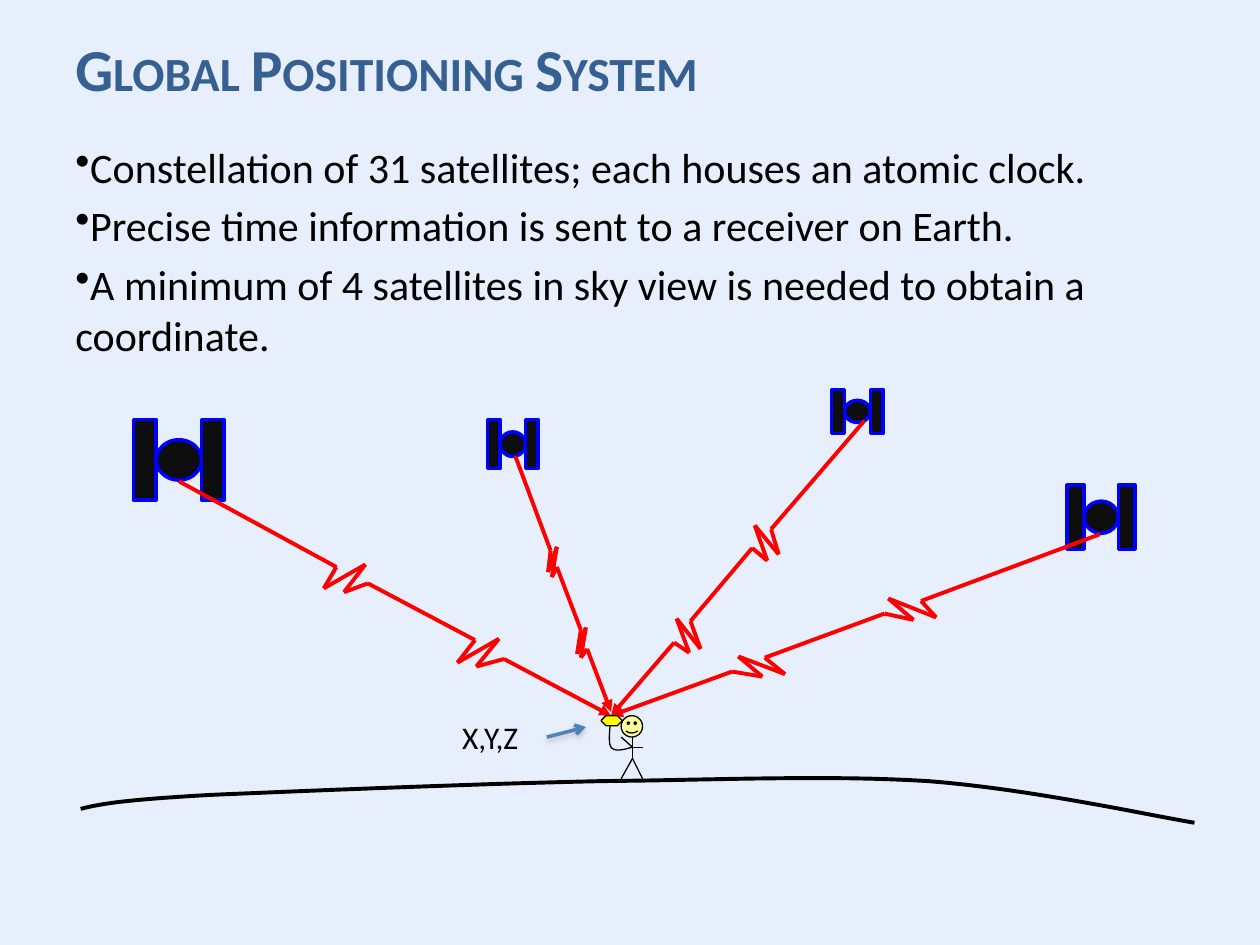
import itertools
from dataclasses import dataclass

import lxml.etree
import pptx
import pptx.dml.color
import pptx.enum.dml
import pptx.enum.shapes
import pptx.enum.text
import pptx.oxml.ns
import pptx.util

Inches = pptx.util.Inches
Pt = pptx.util.Pt
qn = pptx.oxml.ns.qn
SHAPE = pptx.enum.shapes.MSO_SHAPE


@dataclass(frozen=True)
class Theme:
    font: str = "Calibri"
    sky: str = "E8EFFC"
    heading: str = "376092"
    ink: str = "000000"
    panel: str = "0D0D0D"
    panel_edge: str = "0000FF"
    signal: str = "FF0000"
    face: str = "FFFF99"
    receiver: str = "FFFF00"
    pointer: str = "4F81BD"
    shadow: str = "808080"
    title_size: float = 34
    body_size: float = 24
    label_size: float = 18
    thin: float = 0.75
    medium: float = 2
    thick: float = 2.25


THEME = Theme()

# Left, top, width, height of each satellite
SATELLITES = [
    (6.6, 3.09, 0.41, 0.35),
    (1.06, 3.33, 0.72, 0.64),
    (8.47, 3.85, 0.54, 0.51),
    (3.87, 3.33, 0.4, 0.39),
]

# Corners of each signal, from satellite to receiver
SIGNALS = [
    [(1.42, 3.82), (2.67, 4.5), (2.57, 4.67), (2.9, 4.48), (2.73, 4.7), (2.92, 4.63),
     (3.77, 5.08), (3.63, 5.26), (3.96, 5.07), (3.78, 5.29), (4, 5.23), (4.85, 5.68)],
    [(4.09, 3.62), (4.37, 4.37), (4.35, 4.54), (4.42, 4.34), (4.38, 4.58), (4.42, 4.5),
     (4.61, 5), (4.58, 5.19), (4.65, 4.98), (4.61, 5.22), (4.66, 5.15), (4.85, 5.65)],
    [(8.73, 4.24), (7.31, 4.77), (7.43, 4.9), (7.05, 4.75), (7.25, 4.92), (7.02, 4.87),
     (6.07, 5.22), (6.23, 5.35), (5.86, 5.21), (6.05, 5.37), (5.81, 5.33), (4.85, 5.68)],
    [(6.86, 3.34), (6.12, 4.2), (6.18, 4.4), (5.99, 4.17), (6.09, 4.45), (5.97, 4.35),
     (5.48, 4.93), (5.56, 5.15), (5.37, 4.91), (5.47, 5.18), (5.35, 5.1), (4.85, 5.68)],
]

# Bezier points: a start, then two controls and an end for each segment
ARM = [(5.02, 5.93), (4.95, 5.95), (4.88, 5.97), (4.85, 5.93),
       (4.82, 5.89), (4.85, 5.72), (4.85, 5.68)]
GROUND = [(0.64, 6.42), (0.8, 6.38), (0.96, 6.35), (1.65, 6.31),
          (2.34, 6.28), (3.81, 6.22), (4.76, 6.2),
          (5.72, 6.19), (6.59, 6.15), (7.37, 6.2),
          (8.16, 6.26), (9.12, 6.47), (9.48, 6.53)]

FACTS = [
    "Constellation of 31 satellites; each houses an atomic clock.",
    "Precise time information is sent to a receiver on Earth.",
    "A minimum of 4 satellites in sky view is needed to obtain a coordinate.",
]


def rgb(value):
    return pptx.dml.color.RGBColor.from_string(value)


def set_line(shape, color, width):
    shape.line.color.rgb = rgb(color)
    shape.line.width = Pt(width)


def add_text(slide, box, paragraphs, size, color=THEME.ink, bold=False, small_caps=False,
             bullet=None, space=0, wrap=True, middle=False):
    frame = slide.shapes.add_textbox(*map(Inches, box)).text_frame
    frame.word_wrap = wrap
    if middle:
        frame.vertical_anchor = pptx.enum.text.MSO_ANCHOR.MIDDLE
    for index, text in enumerate(paragraphs):
        paragraph = frame.add_paragraph() if index else frame.paragraphs[0]
        if bullet:
            properties = paragraph._p.get_or_add_pPr()
            properties.set("marL", "0")
            properties.set("indent", "0")
            lxml.etree.SubElement(properties, qn("a:buChar"), char=bullet)
        if index:
            paragraph.space_before = Pt(space)
        run = paragraph.add_run()
        run.text = text
        run.font.name = THEME.font
        run.font.size = Pt(size)
        run.font.bold = bold
        run.font.color.rgb = rgb(color)
        if small_caps:
            run.font._element.set("cap", "small")


def add_figure(shapes, kind, box, fill, edge, width):
    figure = shapes.add_shape(kind, *map(Inches, box))
    figure.shadow.inherit = False
    figure.fill.solid()
    figure.fill.fore_color.rgb = rgb(fill)
    set_line(figure, edge, width)
    return figure


def add_line(shapes, start, end, color, width, head=None, shadow=False):
    line = shapes.add_connector(pptx.enum.shapes.MSO_CONNECTOR.STRAIGHT,
                                *map(Inches, (*start, *end)))
    set_line(line, color, width)
    properties = line._element.spPr
    if head:
        lxml.etree.SubElement(properties.find(qn("a:ln")), qn("a:tailEnd"), type=head)
    effects = lxml.etree.SubElement(properties, qn("a:effectLst"))
    if shadow:
        outer = lxml.etree.SubElement(effects, qn("a:outerShdw"), blurRad=str(Pt(3.1)),
                                      dist=str(Pt(1.6)), dir="5400000", rotWithShape="0")
        tint = lxml.etree.SubElement(outer, qn("a:srgbClr"), val=THEME.shadow)
        lxml.etree.SubElement(tint, qn("a:alpha"), val="38000")


def bezier(p0, p1, p2, p3, t):
    return tuple(Inches((1 - t) ** 3 * a + 3 * (1 - t) ** 2 * t * b
                        + 3 * (1 - t) * t ** 2 * c + t ** 3 * d)
                 for a, b, c, d in zip(p0, p1, p2, p3))


def add_curve(slide, points, width, steps=16):
    trace = [bezier(*points[first:first + 4], step / steps)
             for first in range(0, len(points) - 1, 3)
             for step in range(1, steps + 1)]
    builder = slide.shapes.build_freeform(*map(Inches, points[0]))
    builder.add_line_segments(trace, close=False)
    curve = builder.convert_to_shape()
    curve.shadow.inherit = False
    curve.fill.background()
    set_line(curve, THEME.ink, width)


def add_satellite(slide, left, top, width, height):
    """Two panels a quarter of the width each, with a half-size round body between."""
    satellite = slide.shapes.add_group_shape().shapes
    style = (THEME.panel, THEME.panel_edge, THEME.medium)
    for panel_left in (left, left + width * 3 / 4):
        add_figure(satellite, SHAPE.RECTANGLE, (panel_left, top, width / 4, height), *style)
    body = (left + width / 4, top + height / 4, width / 2, height / 2)
    add_figure(satellite, SHAPE.OVAL, body, *style)


def add_signal(slide, corners):
    signal = slide.shapes.add_group_shape().shapes
    for start, end in itertools.pairwise(corners):
        head = "triangle" if end == corners[-1] else None
        add_line(signal, start, end, THEME.signal, THEME.thick, head)


def add_observer(slide):
    add_figure(slide.shapes, SHAPE.SMILEY_FACE, (4.93, 5.68, 0.17, 0.17),
               THEME.face, THEME.ink, THEME.thin)
    neck, hip, shoulder = (5.02, 5.85), (5.02, 6.02), (5.02, 5.93)
    limbs = [(neck, hip), (hip, (5.1, 6.18)), (hip, (4.93, 6.18)),
             (shoulder, (4.93, 5.85)), (shoulder, (5.1, 5.93))]
    for start, end in limbs:
        add_line(slide.shapes, start, end, THEME.ink, THEME.thin)
    add_curve(slide, ARM, THEME.thin)
    receiver = add_figure(slide.shapes, SHAPE.HEXAGON, (4.77, 5.68, 0.17, 0.08),
                          THEME.receiver, THEME.ink, THEME.thin)
    receiver.adjustments[0] = 0.5


def main():
    deck = pptx.Presentation()
    deck.slide_width, deck.slide_height = Inches(10), Inches(7.5)
    slide = deck.slides.add_slide(deck.slide_layouts[6])
    slide.background.fill.solid()
    slide.background.fill.fore_color.rgb = rgb(THEME.sky)

    # Heading
    add_text(slide, (0.5, 0.26, 9, 0.55), ["Global Positioning System"], THEME.title_size,
             color=THEME.heading, bold=True, small_caps=True, middle=True)

    # Satellites and their signals
    for satellite in SATELLITES:
        add_satellite(slide, *satellite)
    for corners in SIGNALS:
        add_signal(slide, corners)

    # Observer with receiver, standing on the ground
    add_observer(slide)
    add_text(slide, (3.57, 5.65, 0.7, 0.4), ["X,Y,Z"], THEME.label_size, wrap=False)
    add_line(slide.shapes, (4.34, 5.85), (4.65, 5.77), THEME.pointer, THEME.medium,
             head="arrow", shadow=True)
    add_curve(slide, GROUND, THEME.thick)

    # Facts
    add_text(slide, (0.5, 1.07, 9.4, 2.48), FACTS, THEME.body_size, bullet="•",
             space=THEME.body_size * 0.2)

    deck.save("out.pptx")


if __name__ == "__main__":
    main()
